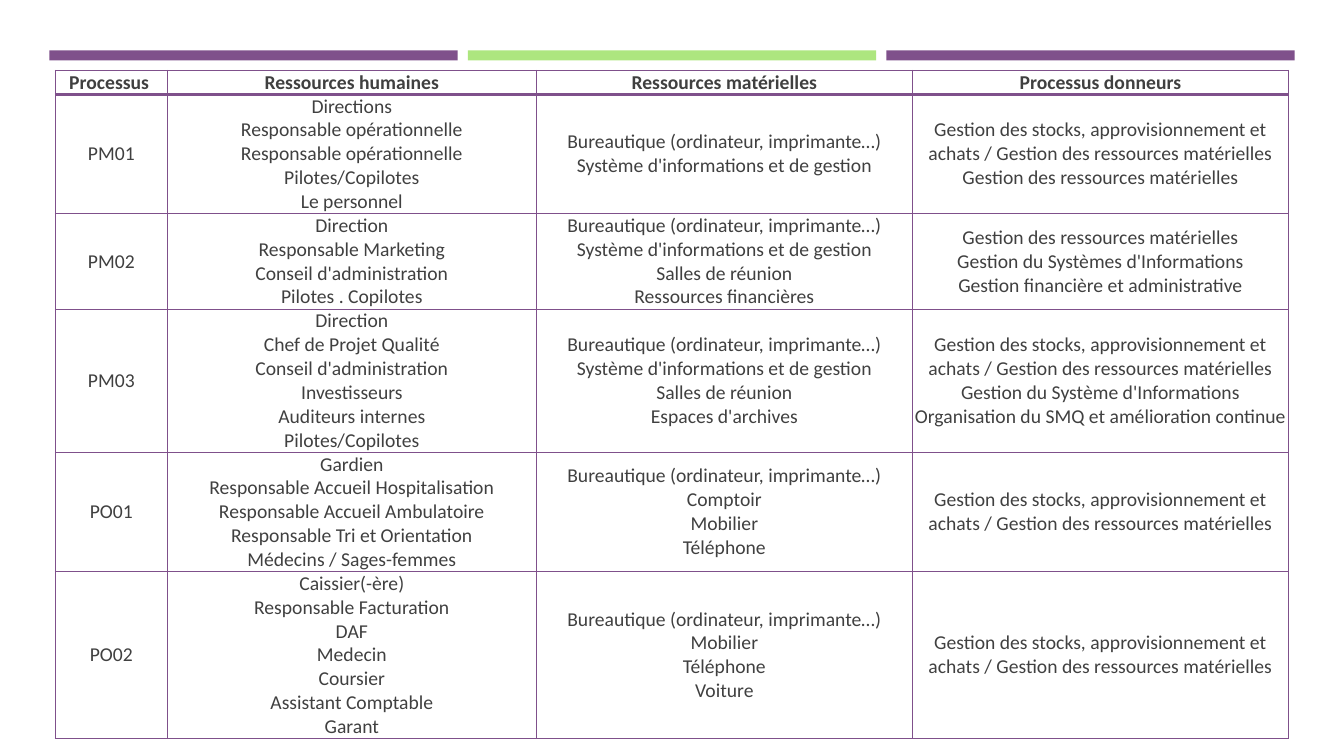
from lxml import etree
from pptx import Presentation
from pptx.dml.color import RGBColor
from pptx.enum.shapes import MSO_SHAPE
from pptx.enum.text import MSO_ANCHOR, PP_ALIGN
from pptx.oxml.ns import qn
from pptx.util import Inches, Pt

RECTANGLE = MSO_SHAPE.RECTANGLE
MIDDLE = MSO_ANCHOR.MIDDLE
CENTER = PP_ALIGN.CENTER

# Content: each cell is a list of lines
OFFICE = "Bureautique (ordinateur, imprimante…)"
SYSTEM = "Système d'informations et de gestion"
MATERIAL = "Gestion des ressources matérielles"
STOCKS = "Gestion des stocks, approvisionnement et achats / " + MATERIAL

HEADER = [["Processus "], ["Ressources humaines"], ["Ressources matérielles"], ["Processus donneurs"]]
PROCESSES = [
    [["PM01"],
     ["Directions", "Responsable opérationnelle", "Responsable opérationnelle",
      "Pilotes/Copilotes", "Le personnel"],
     [OFFICE, SYSTEM],
     [STOCKS, MATERIAL]],
    [["PM02"],
     ["Direction", "Responsable Marketing", "Conseil d'administration", "Pilotes . Copilotes"],
     [OFFICE, SYSTEM, "Salles de réunion", "Ressources financières"],
     [MATERIAL, "Gestion du Systèmes d'Informations", "Gestion financière et administrative"]],
    [["PM03"],
     ["Direction", "Chef de Projet Qualité", "Conseil d'administration",
      "Investisseurs", "Auditeurs internes", "Pilotes/Copilotes"],
     [OFFICE, SYSTEM, "Salles de réunion", "Espaces d'archives"],
     [STOCKS, "Gestion du Système d'Informations", "Organisation du SMQ et amélioration continue"]],
    [["PO01"],
     ["Gardien", "Responsable Accueil Hospitalisation", "Responsable Accueil Ambulatoire",
      "Responsable Tri et Orientation", "Médecins / Sages-femmes"],
     [OFFICE, "Comptoir", "Mobilier", "Téléphone"],
     [STOCKS]],
    [["PO02"],
     ["Caissier(-ère)", "Responsable Facturation", "DAF", "Medecin", "Coursier",
      "Assistant Comptable", "Garant"],
     [OFFICE, "Mobilier", "Téléphone", "Voiture"],
     [STOCKS]],
]

# Look and layout, in inches and points
COLORS = {"purple": "7F508B", "green": "ADE67F", "text": "404040"}
FONT, FONT_SIZE = "Calibri", 14
BAR_COLORS = ["purple", "green", "purple"]
BAR_LEFT, BAR_TOP, BAR_WIDTH, BAR_HEIGHT, BAR_STEP = 0.49, 0.5, 4.05, 0.1, 4.15
TABLE_LEFT, TABLE_TOP = 0.55, 0.7
COLUMN_WIDTHS = [1.11, 3.66, 3.73, 3.73]
HEADER_HEIGHT, LINE_HEIGHT = 0.23, 0.22


def rgb(name):
    return RGBColor.from_string(COLORS[name])


def set_borders(cell, bottom_width):
    """Draw the four sides; they precede the fill in the cell properties."""
    properties = cell._tc.get_or_add_tcPr()
    widths = {"a:lnL": 1, "a:lnR": 1, "a:lnT": 1, "a:lnB": bottom_width}
    for position, (side, width) in enumerate(widths.items()):
        line = etree.Element(qn(side), w=str(Pt(width)))
        fill = etree.SubElement(line, qn("a:solidFill"))
        etree.SubElement(fill, qn("a:srgbClr"), val=COLORS["purple"])
        properties.insert(position, line)


def fill_cell(cell, lines, is_header):
    cell.margin_left = cell.margin_right = cell.margin_top = cell.margin_bottom = 0
    cell.vertical_anchor = MIDDLE
    cell.fill.background()
    para = cell.text_frame.paragraphs[0]
    para.text = "\v".join(lines)
    para.alignment = CENTER
    font = para.font
    font.name, font.size, font.bold = FONT, Pt(FONT_SIZE), is_header
    font.color.rgb = rgb("text")
    set_borders(cell, 2 if is_header else 1)


def main():
    deck = Presentation()
    deck.slide_width, deck.slide_height = Inches(13.33), Inches(7.5)
    page = deck.slides.add_slide(deck.slide_layouts[6])

    # Coloured bars along the top
    for index, color in enumerate(BAR_COLORS):
        bar = page.shapes.add_shape(
            RECTANGLE, Inches(BAR_LEFT + index * BAR_STEP), Inches(BAR_TOP),
            Inches(BAR_WIDTH), Inches(BAR_HEIGHT))
        bar.shadow.inherit = False
        bar.fill.solid()
        bar.fill.fore_color.rgb = rgb(color)
        bar.line.fill.background()

    # Resource table: each row is as high as its longest cell
    rows = [HEADER] + PROCESSES
    heights = [HEADER_HEIGHT] + [LINE_HEIGHT * max(map(len, row)) for row in PROCESSES]
    table = page.shapes.add_table(
        len(rows), len(COLUMN_WIDTHS), Inches(TABLE_LEFT), Inches(TABLE_TOP),
        Inches(sum(COLUMN_WIDTHS)), Inches(sum(heights))).table
    table.horz_banding = False
    for column, width in zip(table.columns, COLUMN_WIDTHS):
        column.width = Inches(width)
    for row_index, (row, height) in enumerate(zip(rows, heights)):
        table.rows[row_index].height = Inches(height)
        for column_index, lines in enumerate(row):
            fill_cell(table.cell(row_index, column_index), lines, row_index == 0)

    deck.save("out.pptx")


if __name__ == "__main__":
    main()
